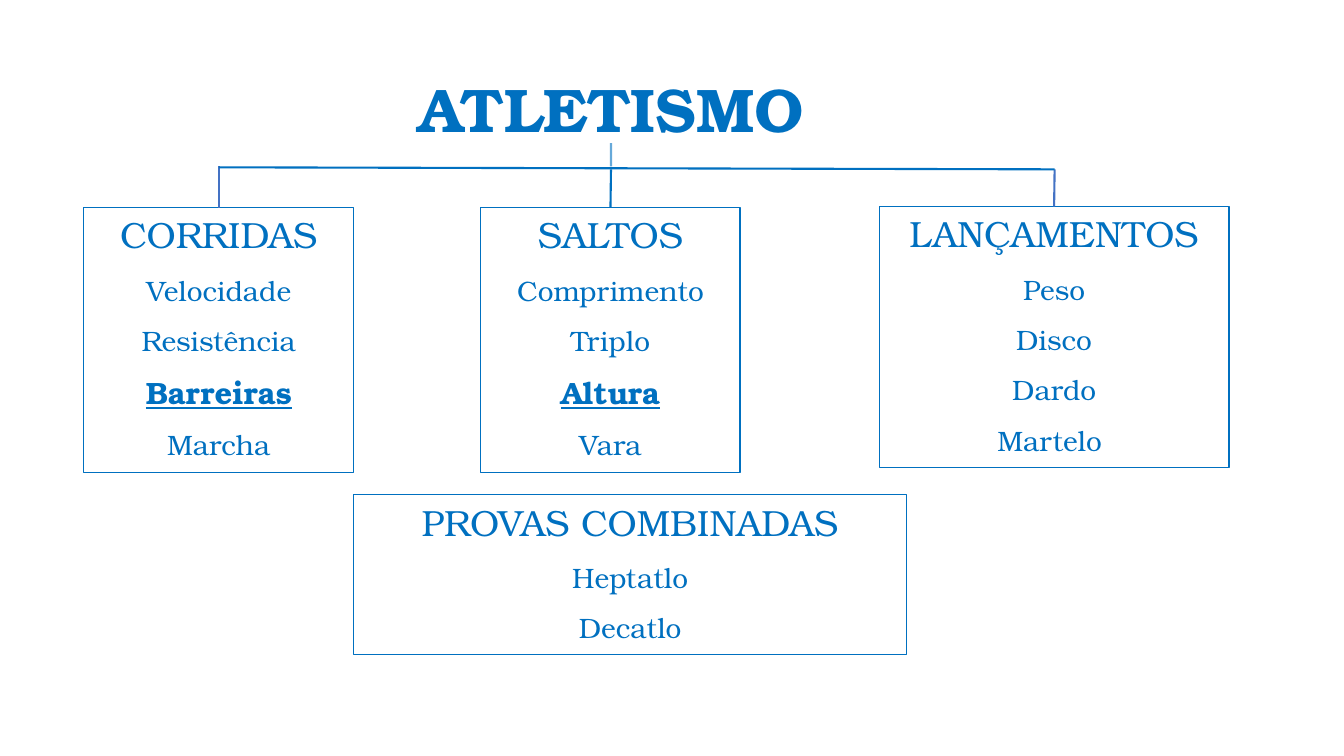
from lxml import etree
from pptx import Presentation
from pptx.dml.color import RGBColor as RGB
from pptx.enum.shapes import MSO_CONNECTOR as Link, MSO_SHAPE as Shape
from pptx.enum.text import MSO_ANCHOR as Anchor, MSO_AUTO_SIZE as Fit, PP_ALIGN as Align
from pptx.oxml.ns import qn
from pptx.util import Inches, Pt

HUES = {"blue": "0070C0", "drop": "4472C4"}
FONT = "TeX Gyre Bonum"


class Board:
    def __init__(self, slide):
        self.slide = slide
        self.shapes = slide.shapes

    def hue(self, name):
        return RGB.from_string(HUES[name])

    def style(self, para, size, bold=False, under=False):
        para.alignment = Align.CENTER
        font = para.font
        font.name = FONT
        font.size = Pt(size)
        font.bold = bold
        font.underline = under
        font.color.rgb = self.hue("blue")

    def title(self, text, left, top, width, height):
        head = self.shapes.title
        head.left, head.top = Inches(left), Inches(top)
        head.width, head.height = Inches(width), Inches(height)
        frame = head.text_frame
        frame.text = text
        frame.word_wrap = True
        frame.vertical_anchor = Anchor.MIDDLE
        para = frame.paragraphs[0]
        self.style(para, 44, bold=True)
        para.space_before, para.space_after = Pt(8.8), Pt(6)

    def group(self, name, events, left, top, width, height, key=None):
        box = self.shapes.add_shape(Shape.RECTANGLE, Inches(left), Inches(top),
                                    Inches(width), Inches(height))
        box.shadow.inherit = False
        box.fill.background()
        box.line.color.rgb = self.hue("blue")
        box.line.width = Pt(0.75)
        frame = box.text_frame
        frame.word_wrap = True
        frame.auto_size = Fit.SHAPE_TO_FIT_TEXT
        frame.vertical_anchor = Anchor.TOP
        frame.text = "\n".join([name, *events])
        for rank, para in enumerate(frame.paragraphs):
            main = para.text == key
            self.style(para, 26 if rank == 0 else 22 if main else 20, main, main)
            para.space_after = Pt(12)
        return box

    def line(self, start, end, hue="blue", box=None, alpha=None):
        x1, y1, x2, y2 = map(Inches, (*start, *end))
        link = self.shapes.add_connector(Link.STRAIGHT, x1, y1, x2, y2)
        link.line.color.rgb = self.hue(hue)
        link.line.width = Pt(1.5)
        props = link._element.spPr
        if alpha:
            tint = props.find(".//" + qn("a:srgbClr"))
            etree.SubElement(tint, qn("a:alpha")).set("val", str(alpha * 1000))
        etree.SubElement(props, qn("a:effectLst"))
        if box is not None:
            link.end_connect(box, 0)


def main():
    deck = Presentation()
    deck.slide_width, deck.slide_height = Inches(13.33), Inches(7.5)
    board = Board(deck.slides.add_slide(deck.slide_layouts[5]))
    board.title("ATLETISMO", 2.96, 0.58, 6.2, 0.99)

    jumps = board.group("SALTOS", ["Comprimento", "Triplo", "Altura", "Vara"],
                        4.77, 2.06, 2.57, 2.63, key="Altura")
    races = board.group("CORRIDAS", ["Velocidade", "Resistência", "Barreiras", "Marcha"],
                        0.83, 2.06, 2.68, 2.63, key="Barreiras")
    throws = board.group("LANÇAMENTOS", ["Peso", "Disco", "Dardo", "Martelo "],
                         8.72, 2.05, 3.47, 2.59)

    board.line((10.46, 1.68), (10.46, 2.05), "drop", throws)
    board.line((2.17, 1.65), (2.17, 2.06), "drop", races)
    board.line((2.17, 1.66), (10.46, 1.68))
    board.line((6.06, 1.65), (6.06, 1.42), alpha=60)
    board.line((6.06, 1.68), (6.06, 2.06), box=jumps)

    board.group("PROVAS COMBINADAS", ["Heptatlo", "Decatlo"], 3.51, 4.91, 5.48, 1.58)
    deck.save("out.pptx")


if __name__ == "__main__":
    main()
